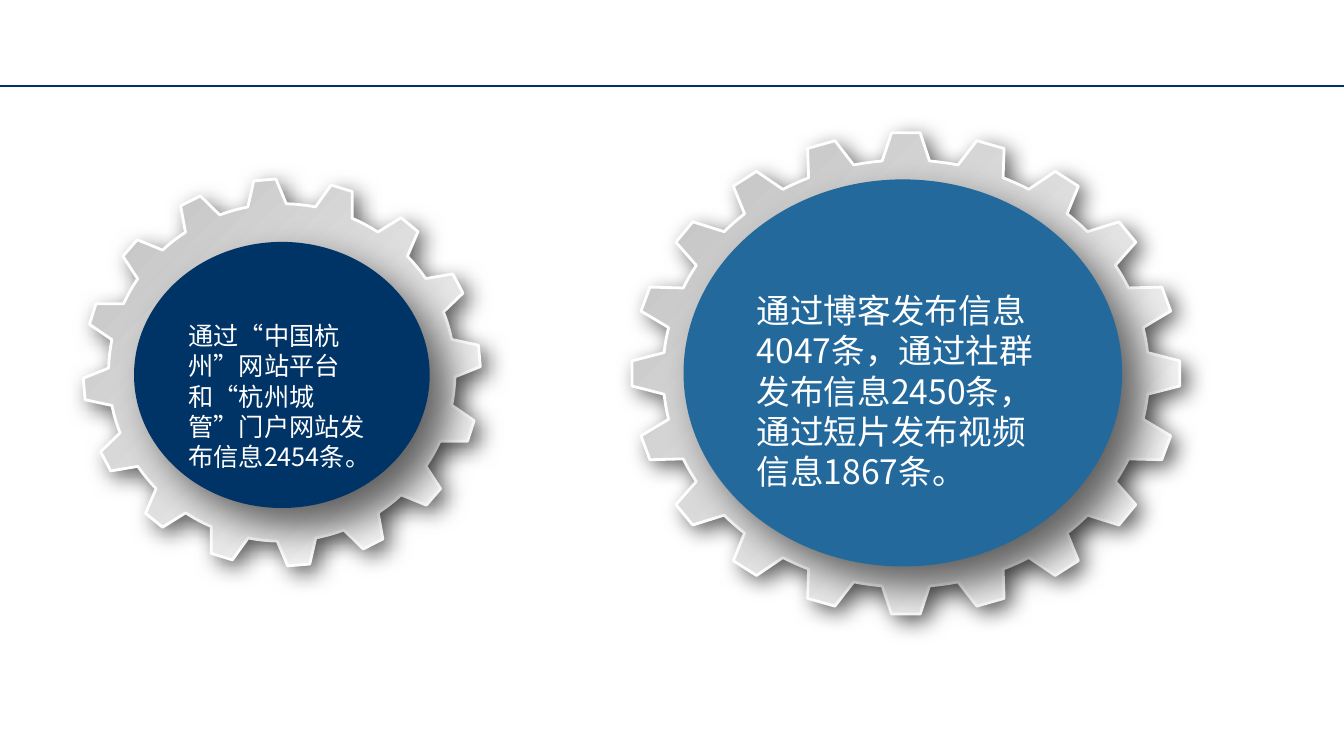
from math import cos, radians, sin

from lxml import etree
from pptx import Presentation
from pptx.dml.color import RGBColor
from pptx.enum.shapes import MSO_CONNECTOR, MSO_SHAPE
from pptx.enum.text import MSO_ANCHOR, MSO_AUTO_SIZE
from pptx.oxml.ns import qn
from pptx.util import Inches, Pt

STRAIGHT = MSO_CONNECTOR.STRAIGHT
OVAL = MSO_SHAPE.OVAL
TOP = MSO_ANCHOR.TOP
FIT_SHAPE = MSO_AUTO_SIZE.SHAPE_TO_FIT_TEXT

NAVY = RGBColor(0x00, 0x33, 0x66)
BLUE = RGBColor(0x24, 0x69, 0x9C)
WHITE = RGBColor(0xFF, 0xFF, 0xFF)
SILVER = RGBColor(0xBF, 0xBF, 0xBF)


class GearSlide:
    """Draws on one slide; every place and length is a percentage of the slide."""

    font = "Noto Sans CJK SC"

    def __init__(self, prs):
        self.width, self.height = prs.slide_width, prs.slide_height
        self.shapes = prs.slides.add_slide(prs.slide_layouts[6]).shapes

    def x(self, share):
        return round(self.width * share / 100)

    def y(self, share):
        return round(self.height * share / 100)

    def effects(self, s):
        return etree.SubElement(s._element.spPr, qn("a:effectLst"))

    def shadow(self, s, blur, distance):
        """Cast a 60 % black shadow to the lower right, sizes in points."""
        shade = etree.SubElement(
            self.effects(s), qn("a:outerShdw"), blurRad=str(Pt(blur)),
            dist=str(Pt(distance)), dir=str(45 * 60000),
            algn="tl", rotWithShape="0")
        color = etree.SubElement(shade, qn("a:srgbClr"), val="000000")
        etree.SubElement(color, qn("a:alpha"), val="60000")

    def rule(self, y):
        s = self.shapes.add_connector(STRAIGHT, 0, self.y(y), self.width, self.y(y))
        s.line.color.rgb = NAVY
        s.line.width = Pt(1.5)
        self.effects(s)

    def gear(self, cx, cy, rx, ry, teeth, root, tip_half, root_half, turn=0):
        """Draw a gear; root is the inner radius ratio, angles are in degrees."""
        step = 360 / teeth
        valley = step - 2 * root_half
        outline = [(-root_half, root), (-tip_half, 1), (tip_half, 1)]
        outline += [(root_half + valley * i / 4, root) for i in range(4)]
        points = []
        for tooth in range(teeth):
            for offset, ratio in outline:
                angle = radians(turn + tooth * step + offset)
                points.append((self.x(cx + rx * ratio * sin(angle)),
                               self.y(cy - ry * ratio * cos(angle))))
        builder = self.shapes.build_freeform(*points[0])
        builder.add_line_segments(points[1:], close=True)
        s = builder.convert_to_shape()
        s.fill.gradient()
        s.fill.gradient_angle = 135
        for stop, color in zip(s.fill.gradient_stops, (WHITE, SILVER)):
            stop.color.rgb = color
        s.line.color.rgb = WHITE
        s.line.width = Pt(2)
        self.shadow(s, 16, 6)

    def disc(self, cx, cy, rx, ry, color):
        s = self.shapes.add_shape(OVAL, self.x(cx - rx), self.y(cy - ry),
                                  self.x(2 * rx), self.y(2 * ry))
        s.fill.solid()
        s.fill.fore_color.rgb = color
        s.line.fill.background()
        self.shadow(s, 30, 20)

    def text(self, left, top, width, height, words, size):
        s = self.shapes.add_textbox(self.x(left), self.y(top),
                                    self.x(width), self.y(height))
        tf = s.text_frame
        tf.word_wrap = True
        tf.auto_size = FIT_SHAPE
        tf.vertical_anchor = TOP
        p = tf.paragraphs[0]
        p.text = words
        p.font.size = Pt(size)
        p.font.color.rgb = WHITE
        p.font.name = self.font
        defaults = p._p.pPr.find(qn("a:defRPr"))
        etree.SubElement(defaults, qn("a:ea"), typeface=self.font)


def main():
    prs = Presentation()
    prs.slide_width, prs.slide_height = Inches(13.33), Inches(7.5)
    slide = GearSlide(prs)
    slide.rule(11.33)
    slide.gear(67.4, 49.4, 20.4, 31.87, teeth=20, root=0.886,
               tip_half=3, root_half=5.6)
    slide.gear(20.97, 49.27, 14.78, 25.6, teeth=16, root=0.872,
               tip_half=3.2, root_half=6.4, turn=-4.9)
    slide.disc(20.97, 49.6, 11, 17.6, NAVY)
    slide.disc(67.18, 49.33, 16.32, 25.6, BLUE)
    slide.text(13.28, 41.73, 15.38, 21.47,
               "通过“中国杭州”网站平台和“杭州城管”门户网站发布信息2454条。", 18)
    slide.text(55.57, 37.7, 23.56, 28.27,
               "通过博客发布信息4047条，通过社群发布信息2450条，"
               "通过短片发布视频信息1867条。", 24)
    prs.save("out.pptx")


if __name__ == "__main__":
    main()
